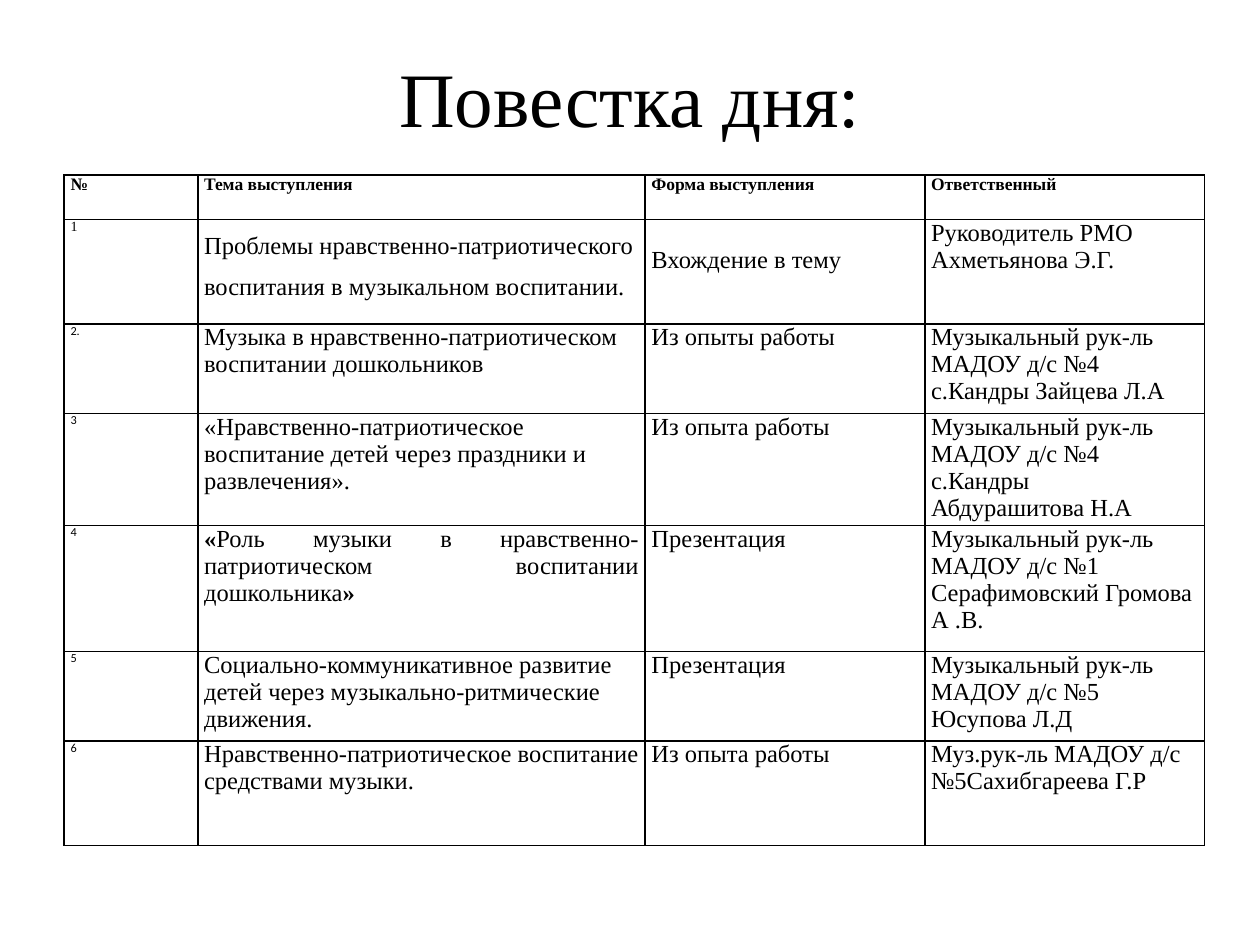
from dataclasses import dataclass

from lxml import etree
from pptx import Presentation
from pptx.dml.color import RGBColor
from pptx.enum.text import MSO_ANCHOR, PP_ALIGN
from pptx.oxml.ns import qn
from pptx.util import Inches, Pt

CENTER, LEFT, JUSTIFY = PP_ALIGN.CENTER, PP_ALIGN.LEFT, PP_ALIGN.JUSTIFY
TOP, MIDDLE = MSO_ANCHOR.TOP, MSO_ANCHOR.MIDDLE
TITLE_ONLY = 5


@dataclass(frozen=True)
class Theme:
    ink: str = "000000"
    paper: str = "FFFFFF"
    serif: str = "Times New Roman"
    sans: str = "Calibri"
    title: float = 44
    header: float = 10
    body: float = 14
    first_number: float = 8
    number: float = 7
    border: float = 1


THEME = Theme()
COLUMN_WIDTHS = (1.06, 3.55, 2.22, 2.22)
ROW_HEIGHTS = (0.35, 0.83, 0.71, 0.89, 1, 0.71, 0.83)
HEADERS = ("№", "Тема выступления", "Форма выступления", "Ответственный")
AGENDA = (
    ("1", "Проблемы нравственно-патриотического воспитания в музыкальном воспитании.",
     "Вхождение в тему", "Руководитель РМО Ахметьянова Э.Г."),
    ("2.", "Музыка в нравственно-патриотическом воспитании дошкольников",
     "Из опыты работы", "Музыкальный рук-ль МАДОУ д/с №4 с.Кандры Зайцева Л.А"),
    ("3", "«Нравственно-патриотическое воспитание детей через праздники и развлечения».",
     "Из опыта работы", "Музыкальный рук-ль МАДОУ д/с №4 с.Кандры\nАбдурашитова Н.А"),
    ("4", (("«", True),
           ("Роль музыки в нравственно-патриотическом воспитании дошкольника", False),
           ("»", True)),
     "Презентация", "Музыкальный рук-ль МАДОУ д/с №1 Серафимовский Громова А .В."),
    ("5", "Социально-коммуникативное развитие детей через музыкально-ритмические движения.",
     "Презентация", "Музыкальный рук-ль МАДОУ д/с №5\nЮсупова Л.Д"),
    ("6", "Нравственно-патриотическое воспитание средствами музыки.",
     "Из опыта работы", "Муз.рук-ль МАДОУ д/с №5Сахибгареева Г.Р"),
)


def format_span(span, size, font, bold=False):
    span.font.size = Pt(size)
    span.font.name = font
    span.font.bold = bold
    span.font.color.rgb = RGBColor.from_string(THEME.ink)


def format_text(frame, size, font, bold=False, align=LEFT):
    for para in frame.paragraphs:
        para.alignment = align
        for span in para.runs:
            format_span(span, size, font, bold)


def add_title(page, text):
    title = page.shapes.title
    title.left, title.top = Inches(0.5), Inches(0.3)
    title.width, title.height = Inches(9), Inches(0.93)
    title.text_frame.text = text
    title.text_frame.vertical_anchor = MIDDLE
    format_text(title.text_frame, THEME.title, THEME.serif, align=CENTER)


def style_cell(cell):
    cell.margin_left = cell.margin_right = Inches(0.05)
    cell.margin_top = cell.margin_bottom = 0
    cell.vertical_anchor = TOP
    properties = cell._tc.get_or_add_tcPr()
    for side in ("a:lnL", "a:lnR", "a:lnT", "a:lnB"):
        line = etree.SubElement(properties, qn(side), w=str(Pt(THEME.border)))
        fill = etree.SubElement(line, qn("a:solidFill"))
        etree.SubElement(fill, qn("a:srgbClr"), val=THEME.ink)
    cell.fill.solid()
    cell.fill.fore_color.rgb = RGBColor.from_string(THEME.paper)


def fill_cell(cell, content, size, font, bold=False):
    style_cell(cell)
    if isinstance(content, str):
        cell.text_frame.text = content
        format_text(cell.text_frame, size, font, bold)
        return
    para = cell.text_frame.paragraphs[0]
    para.alignment = JUSTIFY
    for text, emphasis in content:
        span = para.add_run()
        span.text = text
        format_span(span, size, font, emphasis)


def add_agenda(page):
    frame = page.shapes.add_table(
        len(ROW_HEIGHTS), len(COLUMN_WIDTHS), Inches(0.51), Inches(1.39),
        Inches(sum(COLUMN_WIDTHS)), Inches(sum(ROW_HEIGHTS)))
    table = frame.table
    table.first_row = table.horz_banding = False
    for column, width in zip(table.columns, COLUMN_WIDTHS):
        column.width = Inches(width)
    for row, height in zip(table.rows, ROW_HEIGHTS):
        row.height = Inches(height)
    for index, header in enumerate(HEADERS):
        fill_cell(table.cell(0, index), header, THEME.header, THEME.serif, True)
    for row, (number, *details) in enumerate(AGENDA, 1):
        size, font = ((THEME.first_number, THEME.serif) if row == 1
                      else (THEME.number, THEME.sans))
        fill_cell(table.cell(row, 0), number, size, font)
        for column, detail in enumerate(details, 1):
            fill_cell(table.cell(row, column), detail, THEME.body, THEME.serif)
    table.cell(1, 1).text_frame.paragraphs[0].line_spacing = 1.5
    table.cell(1, 2).margin_top = Inches(0.22)


def main():
    deck = Presentation()
    deck.slide_width, deck.slide_height = Inches(10), Inches(7.5)
    page = deck.slides.add_slide(deck.slide_layouts[TITLE_ONLY])
    add_title(page, "Повестка дня:")
    add_agenda(page)
    deck.save("out.pptx")


if __name__ == "__main__":
    main()
